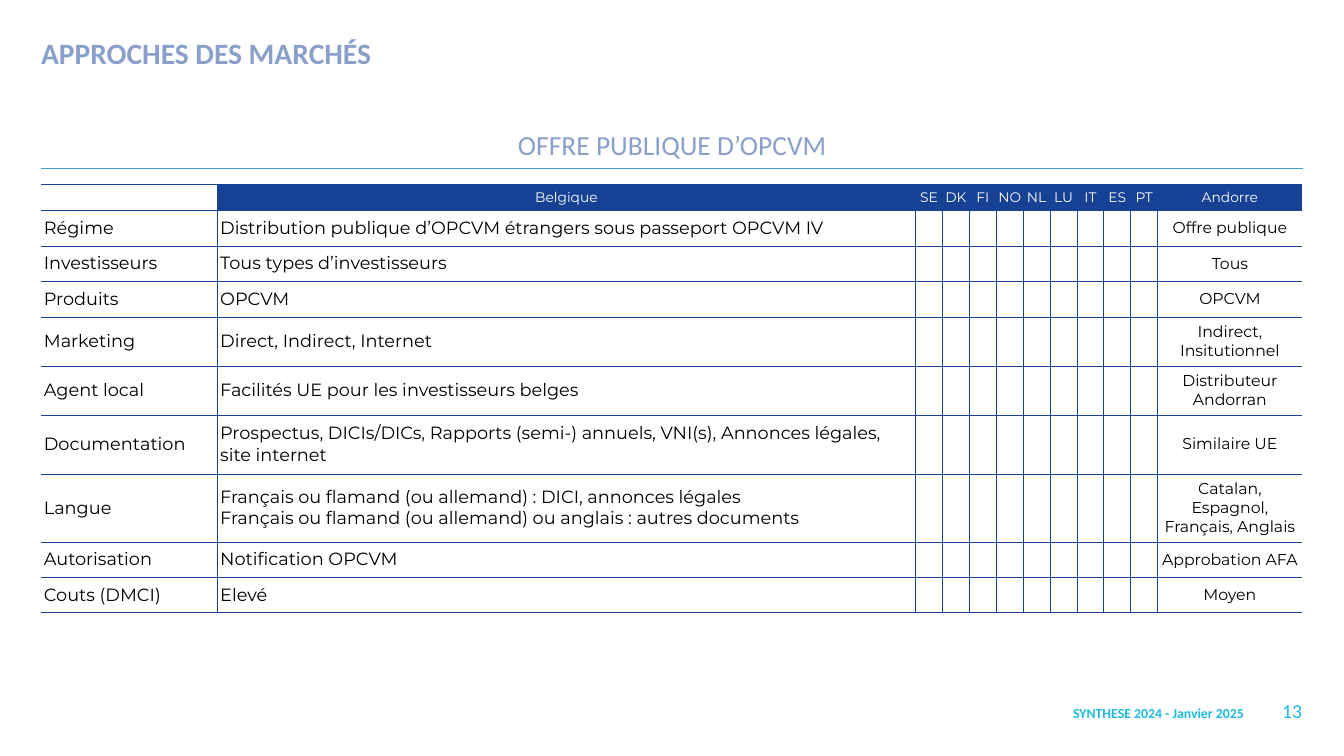
from lxml import etree
from pptx import Presentation
from pptx.dml.color import RGBColor
from pptx.enum.shapes import MSO_CONNECTOR
from pptx.enum.text import MSO_ANCHOR, PP_ALIGN
from pptx.oxml.ns import qn
from pptx.util import Inches, Pt

LEFT, CENTER, RIGHT = PP_ALIGN.LEFT, PP_ALIGN.CENTER, PP_ALIGN.RIGHT
TOP, MIDDLE = MSO_ANCHOR.TOP, MSO_ANCHOR.MIDDLE
STRAIGHT = MSO_CONNECTOR.STRAIGHT

COLORS = {
    "heading": "8AA0CA",
    "footer": "1DBADF",
    "rule": "449DD7",
    "navy": "164194",
    "white": "FFFFFF",
    "black": "000000",
}

TITLE = "APPROCHES DES MARCHÉS"
SUBTITLE = "OFFRE PUBLIQUE D’OPCVM"
FOOTER = "SYNTHESE 2024 - Janvier 2025"
PAGE_NUMBER = "13"

COUNTRIES = ["SE", "DK", "FI", "NO", "NL", "LU", "IT", "ES", "PT"]
HEADER = ["", "Belgique", *COUNTRIES, "Andorre"]
ROWS = [
    (0.5, "Régime", "Distribution publique d’OPCVM étrangers sous passeport OPCVM IV", "Offre publique"),
    (0.5, "Investisseurs", "Tous types d’investisseurs", "Tous"),
    (0.5, "Produits", "OPCVM", "OPCVM"),
    (0.69, "Marketing", "Direct, Indirect, Internet", "Indirect, Insitutionnel"),
    (0.69, "Agent local", "Facilités UE pour les investisseurs belges", "Distributeur Andorran"),
    (0.83, "Documentation",
     "Prospectus, DICIs/DICs, Rapports (semi-) annuels, VNI(s), Annonces légales, site internet",
     "Similaire UE"),
    (0.96, "Langue",
     "Français ou flamand (ou allemand) : DICI, annonces légales\n"
     "Français ou flamand (ou allemand) ou anglais : autres documents",
     "Catalan, Espagnol, Français, Anglais"),
    (0.5, "Autorisation", "Notification OPCVM", "Approbation AFA"),
    (0.5, "Couts (DMCI)", "Elevé", "Moyen"),
]

MARGIN, CONTENT_WIDTH = 0.58, 17.82
HEADER_HEIGHT = 0.37
COLUMN_WIDTHS = [2.49, 9.86, *[0.38] * len(COUNTRIES), 2.04]
LAST_COLUMN = len(COLUMN_WIDTHS) - 1
THIN, MEDIUM, THICK = 0.25, 0.5, 1
LANGUAGE_ROW = 7


def rgb(name):
    return RGBColor.from_string(COLORS[name])


def write(frame, text, font, size, color, align, bold=False):
    para = frame.paragraphs[0]
    para.alignment = align
    for index, line in enumerate(text.split("\n")):
        if index:
            para.add_line_break()
        span = para.add_run()
        span.text = line
        span.font.name = font
        span.font.size = Pt(size)
        span.font.bold = bold
        span.font.color.rgb = rgb(color)
    return para


def format_frame(frame, anchor, wrap=True):
    frame.margin_left = frame.margin_right = frame.margin_top = frame.margin_bottom = 0
    frame.vertical_anchor = anchor
    frame.word_wrap = wrap


def add_label(page, area, text, size, color, align, anchor=MIDDLE, bold=False, wrap=True):
    box = page.shapes.add_textbox(*map(Inches, area))
    format_frame(box.text_frame, anchor, wrap)
    write(box.text_frame, text, "Calibri", size, color, align, bold)


def add_borders(cell, row, column):
    top = MEDIUM if row == LANGUAGE_ROW + 1 else THIN
    bottom = MEDIUM if row == LANGUAGE_ROW else THIN
    left = {0: 0, 1: THIN}.get(column, THICK)
    right = {0: THIN, LAST_COLUMN: 0}.get(column, THICK)
    properties = cell._tc.get_or_add_tcPr()
    for side, width in (("L", left), ("R", right), ("T", top), ("B", bottom)):
        border = etree.SubElement(properties, qn(f"a:ln{side}"), w=str(Pt(width)))
        if width:
            fill = etree.SubElement(border, qn("a:solidFill"))
            etree.SubElement(fill, qn("a:srgbClr"), val=COLORS["navy"])
        else:
            etree.SubElement(border, qn("a:noFill"))


def fill_cell(cell, row, column, text):
    heading = row == 0
    add_borders(cell, row, column)
    if heading and column:
        cell.fill.solid()
        cell.fill.fore_color.rgb = rgb("navy")
    elif column in (0, LAST_COLUMN):
        cell.fill.solid()
        cell.fill.fore_color.rgb = rgb("white")
    else:
        cell.fill.background()
    cell.vertical_anchor = MIDDLE
    cell.margin_left = cell.margin_right = Inches(0 if heading else 0.04)
    inset = 0.08 if not heading else 0.05 if text else 0
    cell.margin_top = cell.margin_bottom = Inches(inset)
    if not text:
        return
    if heading:
        write(cell.text_frame, text, "Montserrat", 14, "white", CENTER)
    elif column == LAST_COLUMN:
        write(cell.text_frame, text, "Montserrat", 16, "black", CENTER)
    else:
        para = write(cell.text_frame, text, "Montserrat", 18, "black", LEFT)
        para.space_after = Pt(3)


def add_market_table(page):
    heights = [HEADER_HEIGHT, *[row[0] for row in ROWS]]
    contents = [HEADER]
    for _, label, belgium, andorra in ROWS:
        contents.append([label, belgium, *[""] * len(COUNTRIES), andorra])
    area = (MARGIN, 2.6, CONTENT_WIDTH, sum(heights))
    table = page.shapes.add_table(len(heights), len(COLUMN_WIDTHS), *map(Inches, area)).table
    table.first_row = table.horz_banding = False
    for column, width in zip(table.columns, COLUMN_WIDTHS):
        column.width = Inches(width)
    for row, height in zip(table.rows, heights):
        row.height = Inches(height)
    for row, texts in enumerate(contents):
        for column, text in enumerate(texts):
            fill_cell(table.cell(row, column), row, column, text)


def main():
    deck = Presentation()
    deck.slide_width, deck.slide_height = Inches(18.98), Inches(10.67)
    page = deck.slides.add_slide(deck.slide_layouts[5])

    title = page.shapes.title
    title.left, title.top, title.width, title.height = map(Inches, (MARGIN, 0.49, 8.91, 0.5))
    format_frame(title.text_frame, TOP)
    write(title.text_frame, TITLE, "Calibri", 30, "heading", LEFT, bold=True)

    add_label(page, (17.71, 9.86, 0.68, 0.34), PAGE_NUMBER, 20, "footer", RIGHT, wrap=False)
    add_label(page, (MARGIN, 1.81, CONTENT_WIDTH, 0.47), SUBTITLE, 28, "heading", CENTER, anchor=TOP)

    ends = (MARGIN, 2.37, MARGIN + CONTENT_WIDTH, 2.37)
    rule = page.shapes.add_connector(STRAIGHT, *map(Inches, ends))
    rule.line.color.rgb = rgb("rule")
    rule.line.width = Pt(0.5)
    etree.SubElement(rule._element.spPr, qn("a:effectLst"))

    add_market_table(page)
    add_label(page, (9.49, 9.94, 8.08, 0.24), FOOTER, 14, "footer", RIGHT, bold=True)
    deck.save("out.pptx")


if __name__ == "__main__":
    main()
